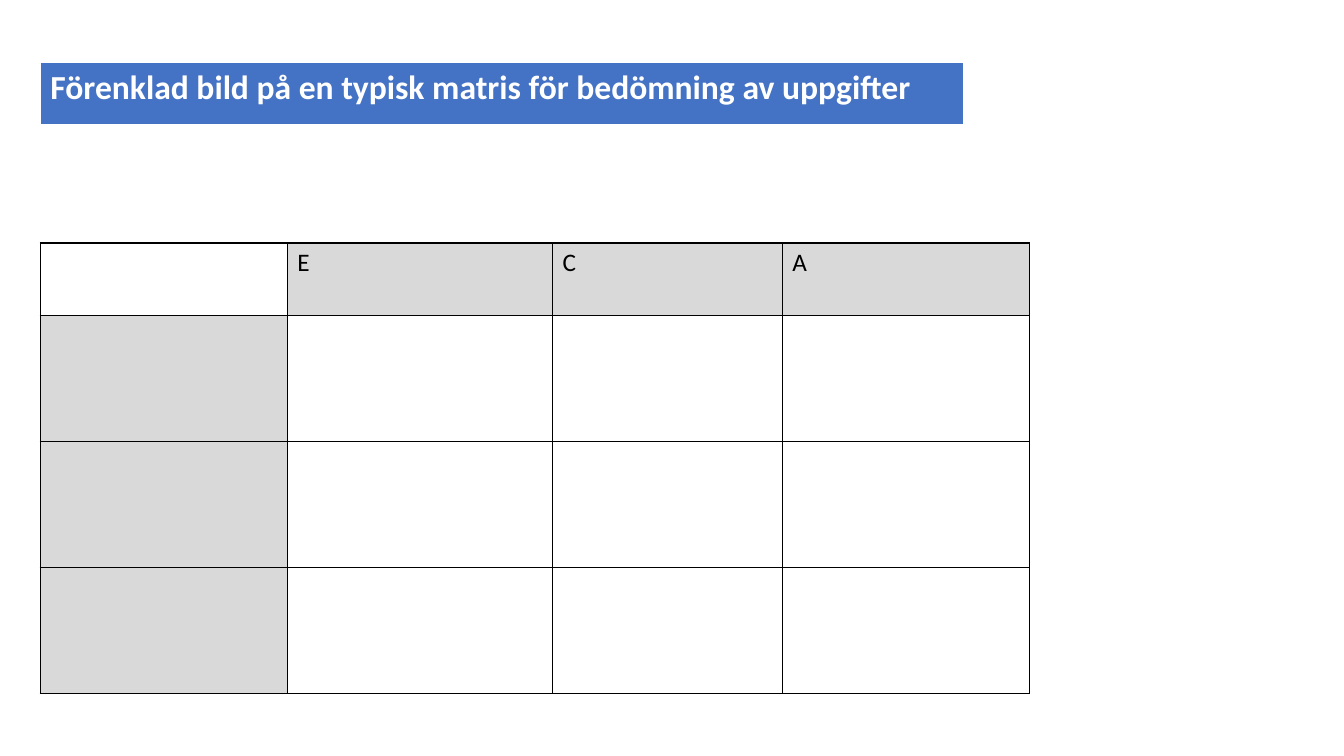
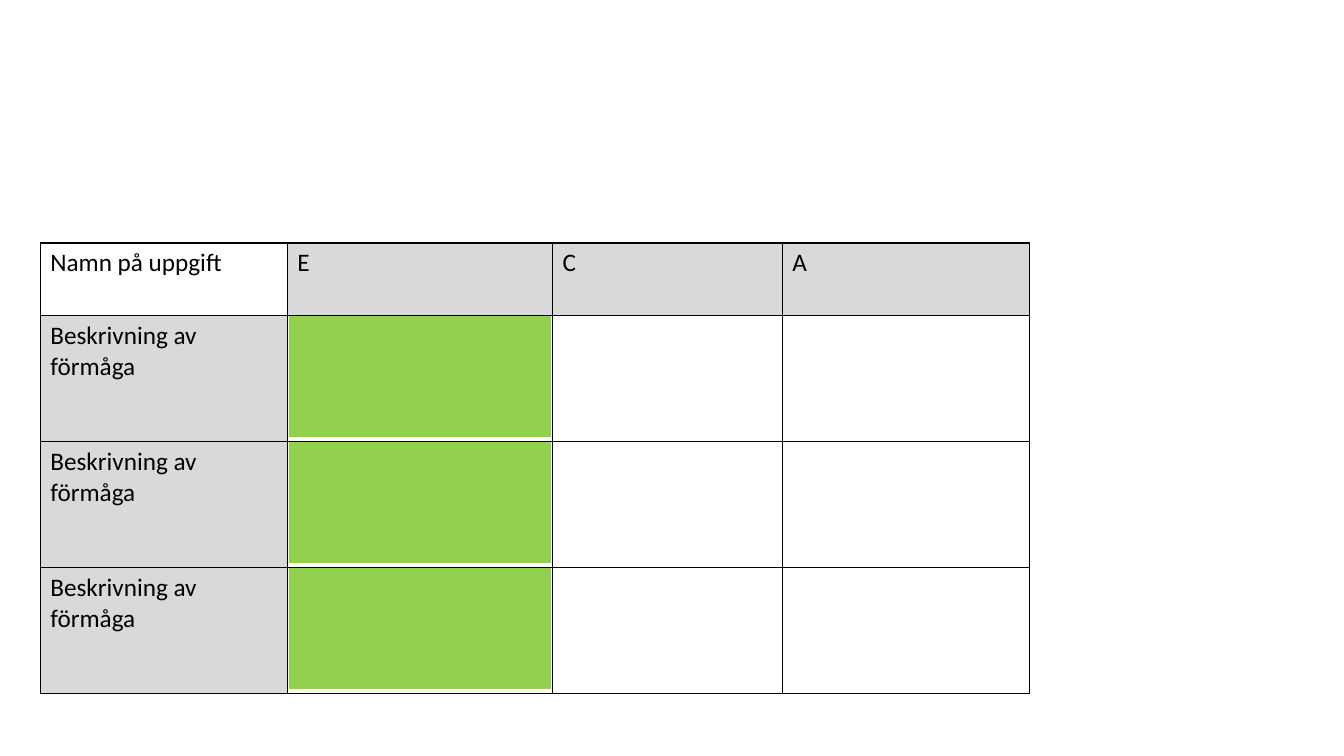
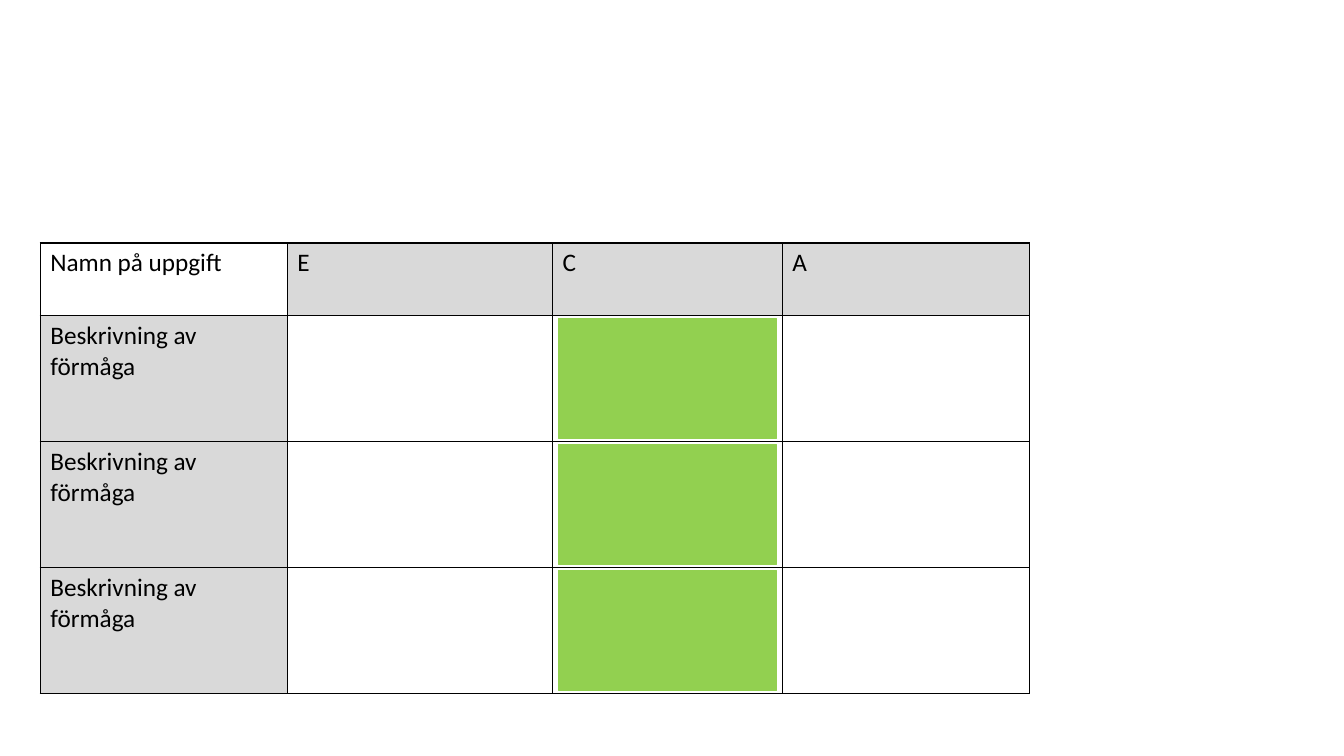
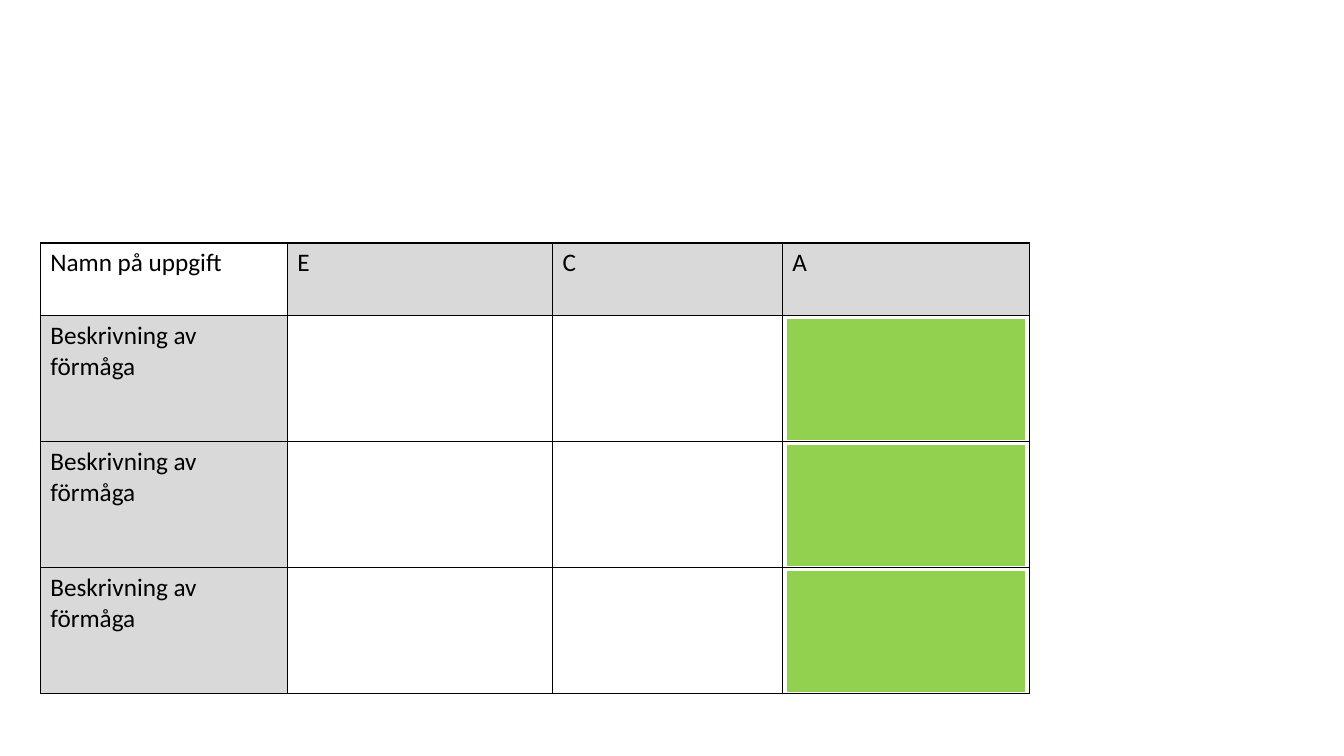
from lxml import etree
from pptx import Presentation
from pptx import util as u
from pptx.dml.color import RGBColor
from pptx.enum import shapes
from pptx.oxml import ns

# Shared style
FONT = "Calibri"
BLACK, WHITE, GREY = "000000", "FFFFFF", "D9D9D9"
BLUE, GREEN = "4472C4", "92D050"

# Matrix geometry in inches
MATRIX_LEFT, MATRIX_TOP = 0.4, 2.41
COLUMNS = [2.45, 2.63, 2.28, 2.45]
ROWS = [0.72, 1.25, 1.25, 1.25]
GRADES = ["E", "C", "A"]
MARK_HEIGHT = 1.19


def color(value):
    return RGBColor.from_string(value)


def write_text(frame, text, size=18, ink=BLACK, bold=False):
    paragraph = frame.paragraphs[0]
    paragraph.font.size = u.Pt(size)
    if text:
        run = paragraph.add_run()
        run.text = text
        run.font.name = FONT
        run.font.size = u.Pt(size)
        run.font.bold = bold
        run.font.color.rgb = color(ink)


def set_borders(cell, ink, widths):
    """Draw the left, right, top and bottom edges with widths in points."""
    properties = cell._tc.get_or_add_tcPr()
    for side, width in zip("LRTB", widths):
        edge = etree.SubElement(properties, ns.qn(f"a:ln{side}"), w=str(u.Pt(width)))
        fill = etree.SubElement(edge, ns.qn("a:solidFill"))
        etree.SubElement(fill, ns.qn("a:srgbClr"), val=ink)


def format_cell(cell, text, fill, border=BLACK, widths=(1, 1, 1, 1), **text_format):
    set_borders(cell, border, widths)
    if fill:
        cell.fill.solid()
        cell.fill.fore_color.rgb = color(fill)
    else:
        cell.fill.background()
    write_text(cell.text_frame, text, **text_format)


def add_plain_table(slide, left, top, columns, rows):
    frame = slide.shapes.add_table(
        len(rows), len(columns), u.Inches(left), u.Inches(top),
        u.Inches(sum(columns)), u.Inches(sum(rows)))
    table = frame.table
    table.first_row = table.horz_banding = False
    for column, width in zip(table.columns, columns):
        column.width = u.Inches(width)
    for row, height in zip(table.rows, rows):
        row.height = u.Inches(height)
    return table


def add_title(slide, text, left, top, width, height):
    table = add_plain_table(slide, left, top, [width], [height])
    format_cell(table.cell(0, 0), text, BLUE, border=WHITE, widths=(1, 1, 1, 3),
                size=24, ink=WHITE, bold=True)


def add_matrix(slide, left, top, task="", ability=""):
    table = add_plain_table(slide, left, top, COLUMNS, ROWS)
    for row in range(len(ROWS)):
        for column in range(len(COLUMNS)):
            if row == 0:
                text = ([task] + GRADES)[column]
            else:
                text = ability if column == 0 else ""
            # Only the header row and first column are grey, not their corner
            fill = GREY if (row == 0) != (column == 0) else None
            format_cell(table.cell(row, column), text, fill)


def add_grade_marks(slide, left, top, grade, inset, drop):
    """Cover the cells of one grade, inset from the sides and dropped from the top."""
    column = GRADES.index(grade) + 1
    mark_left = left + sum(COLUMNS[:column]) + inset
    mark_width = COLUMNS[column] - 2 * inset
    for row in range(1, len(ROWS)):
        mark = slide.shapes.add_shape(
            shapes.MSO_SHAPE.RECTANGLE, u.Inches(mark_left),
            u.Inches(top + sum(ROWS[:row]) + drop),
            u.Inches(mark_width), u.Inches(MARK_HEIGHT))
        mark.shadow.inherit = False
        mark.fill.solid()
        mark.fill.fore_color.rgb = color(GREEN)
        mark.line.color.rgb = color(GREEN)
        mark.line.width = u.Pt(1)


def main():
    presentation = Presentation()
    presentation.slide_width = u.Inches(13.33)
    presentation.slide_height = u.Inches(7.5)
    blank = presentation.slide_layouts[6]

    # Empty matrix with title
    slide = presentation.slides.add_slide(blank)
    add_matrix(slide, MATRIX_LEFT, MATRIX_TOP)
    add_title(slide, "Förenklad bild på en typisk matris för bedömning av uppgifter",
              MATRIX_LEFT, 0.62, 9.16, 0.63)

    # One slide for each grade
    for grade, inset, drop in [("E", 0.02, 0.01), ("C", 0.06, 0.03), ("A", 0.05, 0.04)]:
        slide = presentation.slides.add_slide(blank)
        add_matrix(slide, MATRIX_LEFT, MATRIX_TOP, "Namn på uppgift",
                   "Beskrivning av förmåga")
        add_grade_marks(slide, MATRIX_LEFT, MATRIX_TOP, grade, inset, drop)

    presentation.save("out.pptx")


if __name__ == "__main__":
    main()
